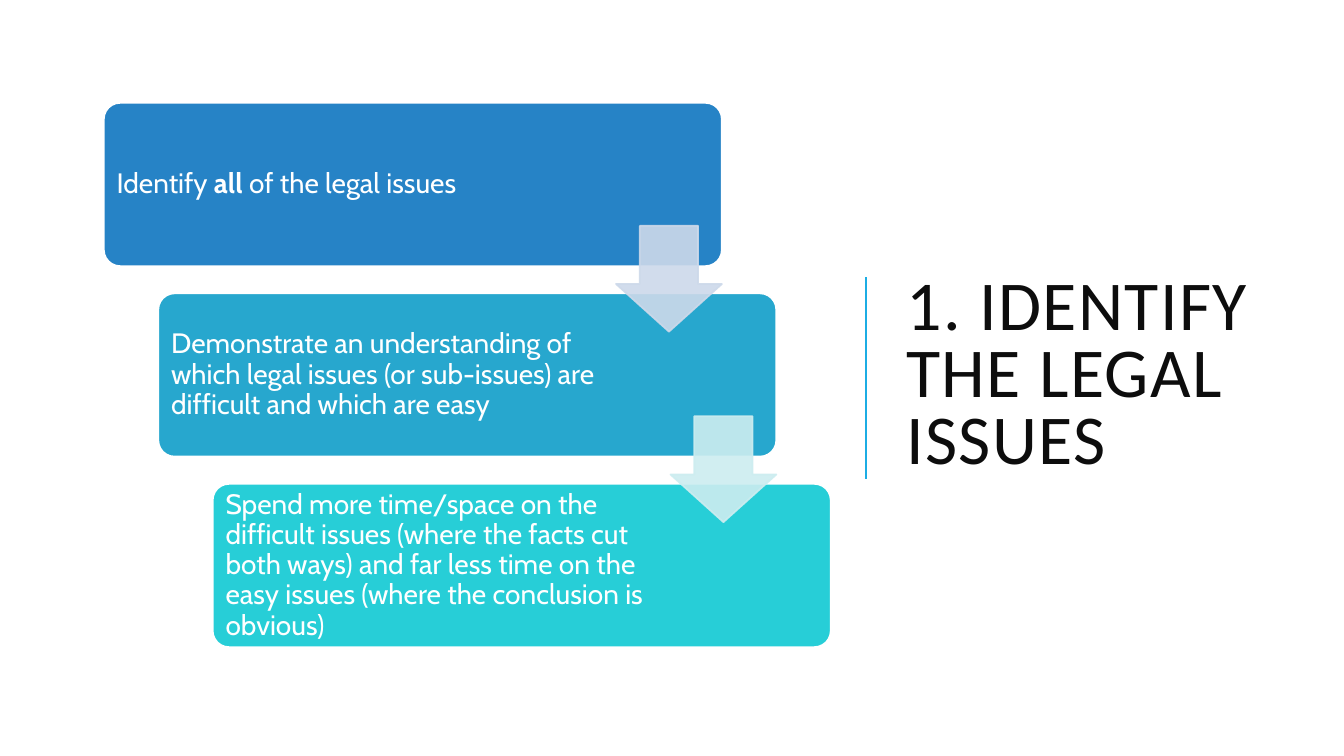
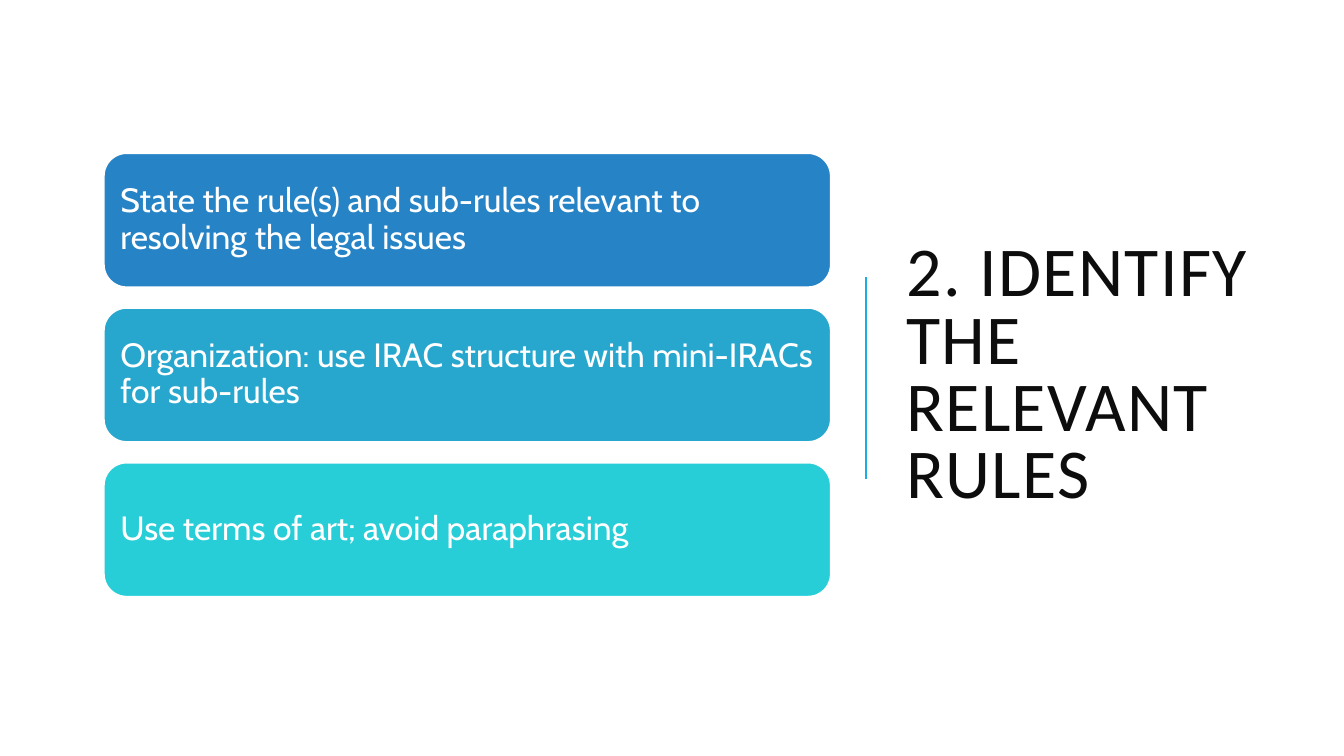
from dataclasses import dataclass

from lxml.etree import SubElement as sub_el
from pptx import Presentation
from pptx.dml.color import RGBColor as Rgb
from pptx.enum.shapes import MSO_CONNECTOR as Link, MSO_SHAPE as Kind
from pptx.enum.text import MSO_ANCHOR as Anchor, PP_ALIGN as Align
from pptx.oxml.ns import qn
from pptx.util import Inches, Pt


@dataclass(frozen=True)
class Theme:
    # Colours
    ink: str = "0D0D0D"
    white: str = "FFFFFF"
    rule: str = "1CADE4"
    cards: tuple = ("2683C6", "27A7CE", "27CED7")
    arrows: tuple = ("CDD9EA", "CDEDF0")
    # Fonts, type sizes and line widths
    head: str = "Calibri"
    body: str = "Cabin"
    title: int = 50
    small: int = 20
    large: int = 24
    edge: float = 1.25
    thin: float = 1.5


LOOK = Theme()


def write(shape, text, *, font, size, color, lead, pads, space=0):
    """Fill a shape with text; every second part between asterisks is bold."""
    frame = shape.text_frame
    frame.word_wrap = True
    frame.vertical_anchor = Anchor.MIDDLE
    (frame.margin_left, frame.margin_top,
     frame.margin_right, frame.margin_bottom) = map(Inches, pads)
    para = frame.paragraphs[0]
    para.alignment = Align.LEFT
    para.line_spacing = lead
    for spot, part in enumerate(text.split("*")):
        run = para.add_run()
        run.text = part
        run.font.name = font
        run.font.size = Pt(size)
        run.font.bold = spot % 2 == 1
        run.font.color.rgb = Rgb.from_string(color)
        if space:
            run.font._element.set("spc", str(space * 100))


def block(slide, kind, box, fill, edge, ratios):
    """Draw a preset shape with a flat fill and an edge."""
    shape = slide.shapes.add_shape(kind, *map(Inches, box))
    shape.shadow.inherit = False
    for spot, ratio in enumerate(ratios):
        shape.adjustments[spot] = ratio
    shape.fill.solid()
    shape.fill.fore_color.rgb = Rgb.from_string(fill)
    shape.line.color.rgb = Rgb.from_string(edge)
    shape.line.width = Pt(LOOK.edge)
    return shape


def card(slide, box, text, fill, *, size, pads, curve):
    shape = block(slide, Kind.ROUNDED_RECTANGLE, box, fill, LOOK.white, [curve])
    write(shape, text, font=LOOK.body, size=size, color=LOOK.white,
          lead=0.9, pads=pads)


def arrow(slide, left, top, color):
    """Draw a down arrow, 90% opaque in fill and edge."""
    shape = block(slide, Kind.DOWN_ARROW, (left, top, 1.05, 1.05),
                  color, color, [0.55, 0.45])
    for tone in shape._element.spPr.iter(qn("a:srgbClr")):
        sub_el(tone, qn("a:alpha")).set("val", "90000")


def page(deck, title):
    """Add a slide with the shared title and the rule beside it."""
    slide = deck.slides.add_slide(deck.slide_layouts[6])
    box = slide.shapes.add_textbox(*map(Inches, (8.89, 0.7, 3.8, 6.09)))
    write(box, title, font=LOOK.head, size=LOOK.title, color=LOOK.ink,
          lead=0.8, pads=(0.1, 0.05, 0.1, 0.05), space=1)
    line = slide.shapes.add_connector(
        Link.STRAIGHT, *map(Inches, (8.59, 4.75, 8.59, 2.75)))
    line.line.color.rgb = Rgb.from_string(LOOK.rule)
    line.line.width = Pt(LOOK.thin)
    sub_el(line._element.spPr, qn("a:effectLst"))
    return slide


def stairs(slide, texts):
    """Step the cards down to the right, with an arrow over each gap."""
    spots = [(1.03 + 0.54 * n, 1.02 + 1.89 * n) for n in range(len(texts))]
    for (left, top), text, fill in zip(spots, texts, LOOK.cards):
        card(slide, (left, top, 6.13, 1.62), text, fill, size=LOOK.small,
             pads=(0.08, 0.08, 1.67, 0.08), curve=0.1)
    for (left, top), color in zip(spots, LOOK.arrows):
        arrow(slide, left + 5.08, top + 1.22, color)


def stack(slide, texts):
    """Spread full-width cards evenly from the first top to the last."""
    first, last = 1.52, 4.59
    step = (last - first) / (len(texts) - 1)
    for n, (text, fill) in enumerate(zip(texts, LOOK.cards)):
        card(slide, (1.03, first + step * n, 7.21, 1.33), text, fill,
             size=LOOK.large, pads=(0.1,) * 4, curve=0.17)


def main():
    deck = Presentation()
    deck.slide_width, deck.slide_height = Inches(13.33), Inches(7.5)

    # Legal issues
    stairs(page(deck, "1. IDENTIFY THE LEGAL ISSUES"), [
        "Identify *all* of the legal issues",
        "Demonstrate an understanding of which legal issues (or sub-issues) "
        "are difficult and which are easy",
        "Spend more time/space on the difficult issues (where the facts cut "
        "both ways) and far less time on the easy issues (where the "
        "conclusion is obvious)",
    ])

    # Relevant rules
    stack(page(deck, "2. IDENTIFY THE RELEVANT RULES"), [
        "State the rule(s) and sub-rules relevant to resolving the legal issues",
        "Organization: use IRAC structure with mini-IRACs for sub-rules",
        "Use terms of art; avoid paraphrasing",
    ])

    deck.save("out.pptx")


if __name__ == "__main__":
    main()
